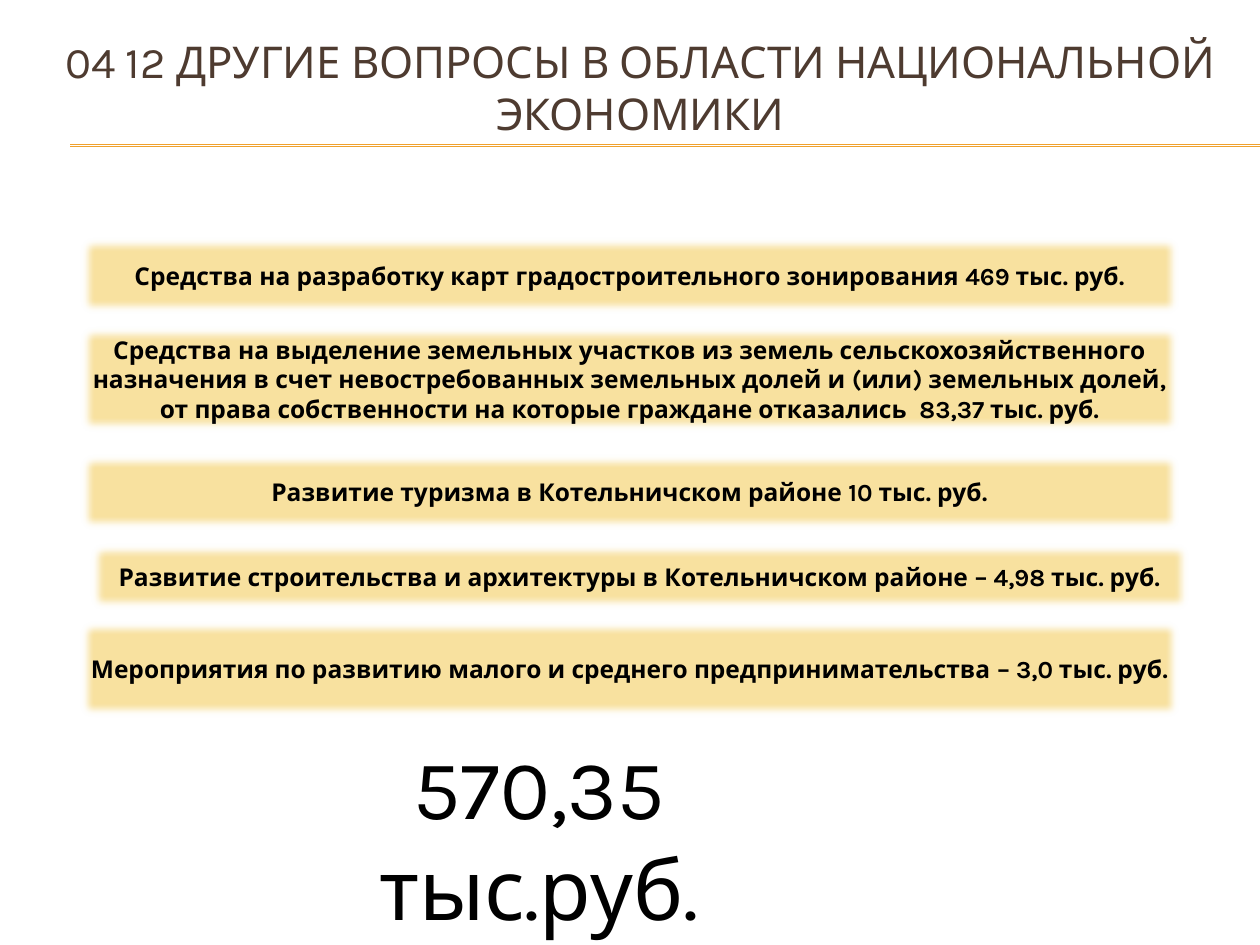
"""Build the slide on other national economy expenses of the district budget."""
from lxml import etree
from pptx import Presentation
from pptx.dml.color import RGBColor
from pptx.enum.shapes import MSO_CONNECTOR, MSO_SHAPE
from pptx.enum.text import MSO_ANCHOR, MSO_AUTO_SIZE, PP_ALIGN
from pptx.oxml.ns import qn
from pptx.util import Cm, Pt

STRAIGHT = MSO_CONNECTOR.STRAIGHT
RECTANGLE = MSO_SHAPE.RECTANGLE
TOP, MIDDLE = MSO_ANCHOR.TOP, MSO_ANCHOR.MIDDLE
CENTER = PP_ALIGN.CENTER
NO_AUTOFIT = MSO_AUTO_SIZE.NONE

FONT = "Karla"
COLORS = {
    "title": "4E3B30",
    "rule": "F0A22E",
    "band": "F8E19F",
    "border": "B27822",
    "text": "000000",
}
SOFT_EDGE_EMU = "63500"
BAND_WIDTH = 22.22
EXPENSES = [
    (1.58, 4.75, 1.6, "Средства на разработку карт градостроительного зонирования 469 тыс. руб."),
    (1.58, 6.55, 2.18, "Средства на выделение земельных участков из земель сельскохозяйственного "
     "назначения в счет невостребованных земельных долей и (или) земельных долей, "
     "от права собственности на которые граждане отказались  83,37 тыс. руб."),
    (1.58, 9.12, 1.6, "Развитие туризма в Котельничском районе 10 тыс. руб."),
    (1.78, 10.92, 1.4, "Развитие строительства и архитектуры в Котельничском районе – 4,98 тыс. руб."),
    (1.58, 12.5, 1.98, "Мероприятия по развитию малого и среднего предпринимательства – 3,0 тыс. руб."),
]


def color(name):
    return RGBColor.from_string(COLORS[name])


def write(holder, text, size, color_name, bold=False, anchor=MIDDLE, margin=0.25):
    frame = holder.text_frame
    frame.text = text
    frame.word_wrap = True
    frame.auto_size = NO_AUTOFIT
    frame.vertical_anchor = anchor
    frame.margin_left = frame.margin_right = Cm(margin)
    paragraph = frame.paragraphs[0]
    paragraph.alignment = CENTER
    font = paragraph.runs[0].font
    font.name = FONT
    font.size = Pt(size)
    font.bold = bold
    font.color.rgb = color(color_name)


prs = Presentation()
prs.slide_width, prs.slide_height = Cm(25.4), Cm(19.05)
slide = prs.slides.add_slide(prs.slide_layouts[5])

for rule_top in (2.92, 2.95):
    rule = slide.shapes.add_connector(STRAIGHT, Cm(1.42), Cm(rule_top), Cm(25.4), Cm(rule_top))
    rule.line.color.rgb = color("rule")
    rule.line.width = Pt(0.75)
    etree.SubElement(rule._element.spPr, qn("a:effectLst"))

title = slide.shapes.title
title.left, title.top, title.width, title.height = Cm(0.84), Cm(0.58), Cm(24.13), Cm(2.34)
write(title, "04 12 ДРУГИЕ ВОПРОСЫ В ОБЛАСТИ НАЦИОНАЛЬНОЙ ЭКОНОМИКИ", 25, "title")

for left, top, height, expense in EXPENSES:
    band = slide.shapes.add_shape(RECTANGLE, Cm(left), Cm(top), Cm(BAND_WIDTH), Cm(height))
    band.shadow.inherit = False
    band.fill.solid()
    band.fill.fore_color.rgb = color("band")
    band.line.color.rgb = color("border")
    band.line.width = Pt(0.25)
    effects = band._element.spPr.find(qn("a:effectLst"))
    etree.SubElement(effects, qn("a:softEdge"), rad=SOFT_EDGE_EMU)
    write(band, expense, 14, "text", bold=True, margin=0.2)

total = slide.shapes.add_textbox(Cm(4.75), Cm(14.71), Cm(12.24), Cm(2.31))
write(total, "570,35 тыс.руб.", 48, "text", anchor=TOP, margin=1)

prs.save("out.pptx")
